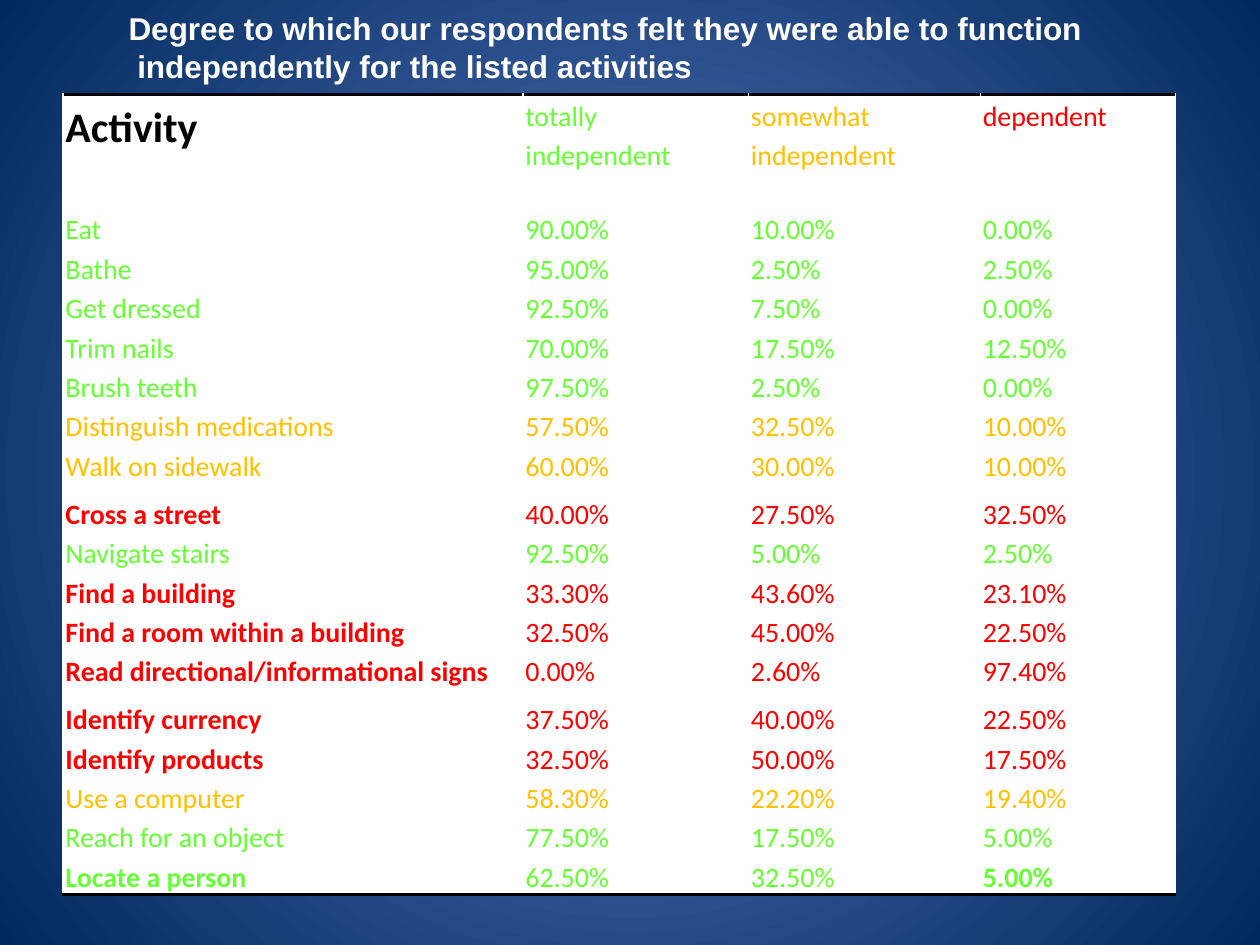
"""Builds the slide on how independently respondents perform daily activities."""
from dataclasses import dataclass

from pptx import Presentation
from pptx import util as u
from pptx.dml import color as c
from pptx.enum import text as t
from pptx.oxml import ns, xmlchemy as x


@dataclass(frozen=True)
class Theme:
    """Colours, fonts and type sizes of the slide."""
    green: str = "66FF33"
    amber: str = "FFC000"
    red: str = "FF0000"
    black: str = "000000"
    white: str = "FFFFFF"
    centre: str = "5E7CC5"
    edge: str = "00295C"
    title_font: str = "Arial"
    table_font: str = "Calibri"
    title_size: float = 18
    head_size: float = 24
    body_size: float = 16


THEME = Theme()
COLUMN_WIDTHS = (262.8, 128.9, 132.5, 111.6)
HEADER_HEIGHT, GAP_HEIGHT, ROW_HEIGHT, TALL_HEIGHT = 45, 20, 22.4, 27.4
TALL_ACTIVITIES = ("Walk on sidewalk", "Read directional/informational signs")
TITLE = (
    "Degree to which our respondents felt they were able to function",
    " independently for the listed activities",
)
HEADINGS = (
    ("Activity", THEME.black),
    ("totally independent", THEME.green),
    ("somewhat independent", THEME.amber),
    ("dependent", THEME.red),
)
ACTIVITIES = (
    ("Eat", THEME.green, 90, 10, 0),
    ("Bathe", THEME.green, 95, 2.5, 2.5),
    ("Get dressed", THEME.green, 92.5, 7.5, 0),
    ("Trim nails", THEME.green, 70, 17.5, 12.5),
    ("Brush teeth", THEME.green, 97.5, 2.5, 0),
    ("Distinguish medications", THEME.amber, 57.5, 32.5, 10),
    ("Walk on sidewalk", THEME.amber, 60, 30, 10),
    ("Cross a street", THEME.red, 40, 27.5, 32.5),
    ("Navigate stairs", THEME.green, 92.5, 5, 2.5),
    ("Find a building", THEME.red, 33.3, 43.6, 23.1),
    ("Find a room within a building", THEME.red, 32.5, 45, 22.5),
    ("Read directional/informational signs", THEME.red, 0, 2.6, 97.4),
    ("Identify currency", THEME.red, 37.5, 40, 22.5),
    ("Identify products", THEME.red, 32.5, 50, 17.5),
    ("Use a computer", THEME.amber, 58.3, 22.2, 19.4),
    ("Reach for an object", THEME.green, 77.5, 17.5, 5),
    ("Locate a person", THEME.green, 62.5, 32.5, 5),
)


def write_text(paragraph, text, *, size, font, color, bold=False, spacing=1.0):
    """Writes one formatted, left-aligned run into a paragraph."""
    paragraph.alignment = t.PP_ALIGN.LEFT
    paragraph.line_spacing = spacing
    paragraph.space_before = u.Pt(0)
    run = paragraph.add_run()
    run.text = text
    run.font.size = u.Pt(size)
    run.font.name = font
    run.font.bold = bold
    run.font.color.rgb = c.RGBColor.from_string(color)


def paint_background(slide):
    """Fills the background with a gradient radiating from the centre."""
    fill = slide.background.fill
    fill.gradient()
    for stop, color in zip(fill.gradient_stops, (THEME.centre, THEME.edge)):
        stop.color.rgb = c.RGBColor.from_string(color)
    gradient = slide.element.find(".//" + ns.qn("a:gradFill"))
    gradient.remove(gradient.find(ns.qn("a:lin")))
    radial = x.OxmlElement("a:path")
    radial.set("path", "circle")
    focus = x.OxmlElement("a:fillToRect")
    for side in "ltrb":
        focus.set(side, "50000")
    radial.append(focus)
    gradient.append(radial)


def place_title(slide):
    """Moves the title placeholder to the top and writes its two lines."""
    title = slide.shapes.title
    title.left, title.top = u.Pt(66.24), u.Pt(0)
    title.width, title.height = u.Pt(565.2), u.Pt(72.72)
    frame = title.text_frame
    frame.word_wrap = False
    frame.auto_size = t.MSO_AUTO_SIZE.NONE
    frame.vertical_anchor = t.MSO_ANCHOR.TOP
    frame.margin_top = u.Pt(5)
    for index, line in enumerate(TITLE):
        paragraph = frame.add_paragraph() if index else frame.paragraphs[0]
        write_text(paragraph, line, size=THEME.title_size, font=THEME.title_font,
                   color=THEME.white, bold=True)


def format_cell(cell):
    """Gives a cell a white fill, tight margins and the body size when empty."""
    cell.margin_left = cell.margin_right = u.Pt(1.44)
    cell.margin_top = cell.margin_bottom = u.Pt(0)
    cell.fill.solid()
    cell.fill.fore_color.rgb = c.RGBColor.from_string(THEME.white)
    ending = x.OxmlElement("a:endParaRPr")
    ending.set("sz", str(int(THEME.body_size * 100)))
    cell.text_frame.paragraphs[0]._p.append(ending)


def rule_cell(cell, side):
    """Draws a black rule along one side of a cell."""
    line = x.OxmlElement("a:ln" + side)
    line.set("w", str(u.Pt(2)))
    fill = x.OxmlElement("a:solidFill")
    color = x.OxmlElement("a:srgbClr")
    color.set("val", THEME.black)
    fill.append(color)
    line.append(fill)
    cell._tc.get_or_add_tcPr().insert(0, line)


def write_cell(cell, text, color, size=THEME.body_size, bold=False):
    """Writes one table entry."""
    write_text(cell.text_frame.paragraphs[0], text, size=size,
               font=THEME.table_font, color=color, bold=bold, spacing=1.15)


def add_activity_table(slide):
    """Adds the table of activities, ruled above and below."""
    heights = [HEADER_HEIGHT, GAP_HEIGHT] + [
        TALL_HEIGHT if name in TALL_ACTIVITIES else ROW_HEIGHT
        for name, *_ in ACTIVITIES
    ]
    table = slide.shapes.add_table(
        len(heights), len(COLUMN_WIDTHS), u.Pt(36), u.Pt(54),
        u.Pt(sum(COLUMN_WIDTHS)), u.Pt(sum(heights))).table
    table.first_row = table.horz_banding = False
    for column, width in zip(table.columns, COLUMN_WIDTHS):
        column.width = u.Pt(width)
    for row, height in zip(table.rows, heights):
        row.height = u.Pt(height)
    for cell in table.iter_cells():
        format_cell(cell)
    for index, (heading, color) in enumerate(HEADINGS):
        first = index == 0
        write_cell(table.cell(0, index), heading, color,
                   THEME.head_size if first else THEME.body_size, first)
        rule_cell(table.cell(0, index), "T")
        rule_cell(table.cell(len(heights) - 1, index), "B")
    last_name = ACTIVITIES[-1][0]
    for row, (name, color, *shares) in enumerate(ACTIVITIES, start=2):
        is_last = name == last_name
        write_cell(table.cell(row, 0), name, color,
                   bold=is_last or color == THEME.red)
        for column, share in enumerate(shares, start=1):
            write_cell(table.cell(row, column), f"{share:.2f}%", color,
                       bold=is_last and column == len(shares))


def main():
    """Builds and saves the presentation."""
    presentation = Presentation()
    presentation.slide_width, presentation.slide_height = u.Pt(720), u.Pt(540)
    slide = presentation.slides.add_slide(presentation.slide_layouts[5])
    paint_background(slide)
    place_title(slide)
    add_activity_table(slide)
    presentation.save("out.pptx")


if __name__ == "__main__":
    main()
